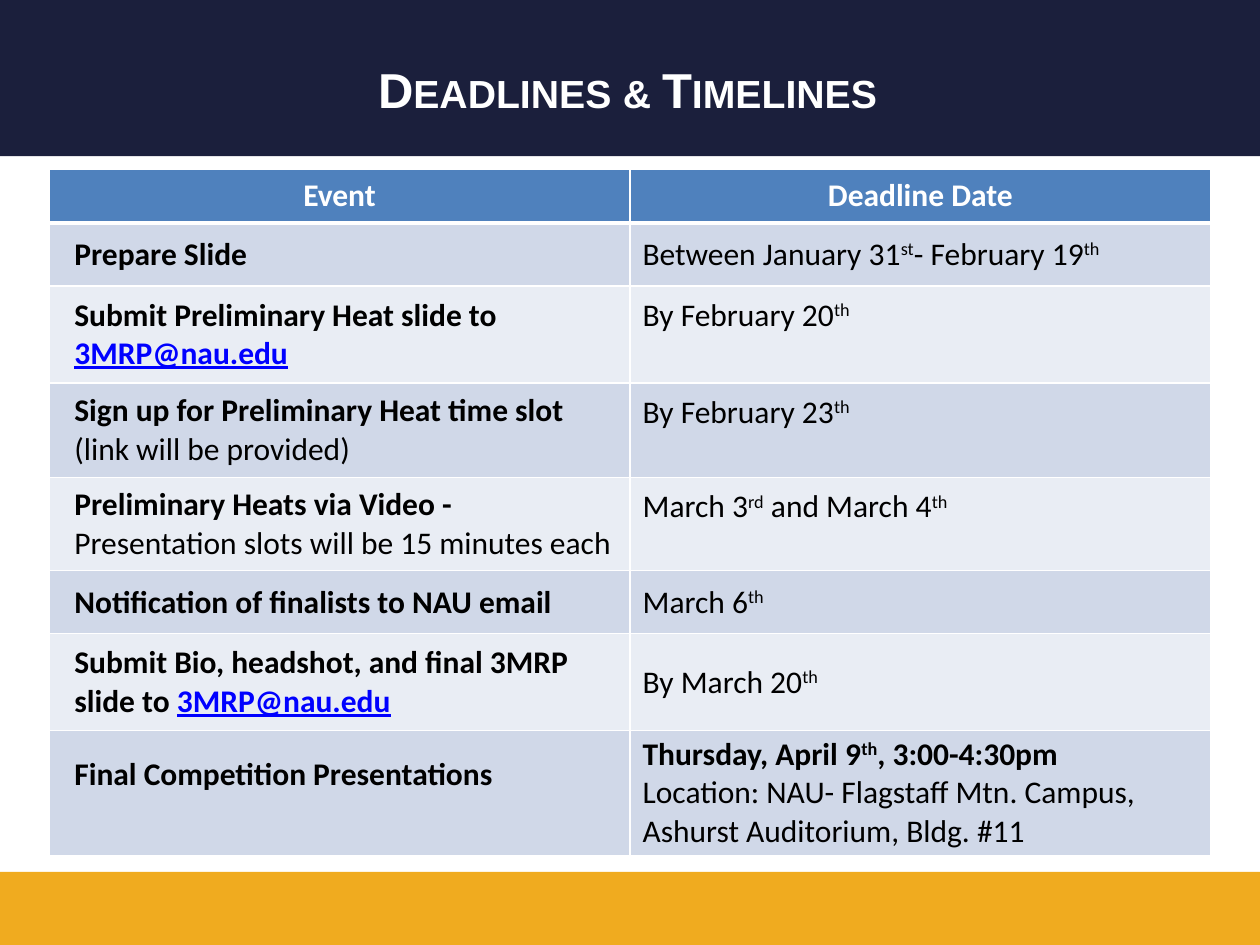
import pptx
import pptx.util
import pptx.dml.color
import pptx.enum.shapes
import pptx.enum.text
import lxml.etree

Inches, Pt = pptx.util.Inches, pptx.util.Pt
RGB = pptx.dml.color.RGBColor
Align = pptx.enum.text.PP_ALIGN
Anchor = pptx.enum.text.MSO_ANCHOR

NAVY = RGB(0x1B, 0x1F, 0x3C)
GOLD = RGB(0xF0, 0xAB, 0x1F)
WHITE = RGB(0xFF, 0xFF, 0xFF)
BLACK = RGB(0, 0, 0)
LINK = RGB(0, 0, 0xFF)
HEAD = RGB(0x4F, 0x81, 0xBD)
DARK = RGB(0xD0, 0xD8, 0xE8)
LIGHT = RGB(0xE9, 0xED, 0xF4)

# Content: a cell is a list of lines, a line a list of (text, style) runs
# Styles: b bold, u link, s superscript
TITLE = "Deadlines & Timelines"
MAIL = ("3MRP@nau.edu", "bu")
TH = ("th", "s")
HEADS = ["Event", "Deadline Date"]
ROWS = [
    ([[("Prepare Slide", "b")]],
     [[("Between January 31", ""), ("st", "s"), ("- February 19", ""), TH]]),
    ([[("Submit Preliminary Heat slide to", "b")], [MAIL]],
     [[("By February 20", ""), TH]]),
    ([[("Sign up for Preliminary Heat time slot", "b")],
      [("(link will be provided)", "")]],
     [[("By February 23", ""), TH]]),
    ([[("Preliminary Heats via Video -", "b")],
      [("Presentation slots will be 15 minutes each", "")]],
     [[("March 3", ""), ("rd", "s"), (" and March 4", ""), TH]]),
    ([[("Notification of finalists to NAU email", "b")]],
     [[("March 6", ""), TH]]),
    ([[("Submit Bio, headshot, and final 3MRP slide to ", "b"), MAIL]],
     [[("By March 20", ""), TH]]),
    ([[("Final Competition Presentations", "b")]],
     [[("Thursday, April 9", "b"), ("th", "bs"), (", 3:00-4:30pm", "b")],
      [("Location: NAU- Flagstaff Mtn. Campus,", "")],
      [("Ashurst Auditorium, Bldg. #11", "")]]),
]
HIGHS = [0.43, 0.5, 0.77, 0.75, 0.74, 0.5, 0.77, 0.99]
# Cells set from the top: (row, column) -> top margin
TOPS = {(2, 1): 0.08, (3, 1): 0.08, (4, 1): 0.08, (7, 0): 0.2}


def add_band(slide, top, high, color):
    band = slide.shapes.add_shape(
        pptx.enum.shapes.MSO_SHAPE.RECTANGLE,
        0, Inches(top), Inches(10), Inches(high))
    band.shadow.inherit = False
    band.fill.solid()
    band.fill.fore_color.rgb = color
    band.line.fill.background()


def set_font(run, size, name, color, bold):
    font = run.font
    font.size, font.name, font.bold = Pt(size), name, bold
    font.color.rgb = color


def add_runs(para, line, color):
    for text, style in line:
        run = para.add_run()
        run.text = text
        set_font(run, 18, "Calibri", LINK if "u" in style else color,
                 "b" in style)
        if "u" in style:
            run.font.underline = True
        if "s" in style:
            run.font._element.set("baseline", "30000")


def set_edges(cell, row):
    wide = {"L": 1, "R": 1, "T": 3 if row == 1 else 1,
            "B": 3 if row == 0 else 1}
    props = cell._tc.get_or_add_tcPr()
    ns = "http://schemas.openxmlformats.org/drawingml/2006/main"
    for spot, (side, width) in enumerate(wide.items()):
        edge = lxml.etree.Element(f"{{{ns}}}ln{side}", w=str(Pt(width)))
        fill = lxml.etree.SubElement(edge, f"{{{ns}}}solidFill")
        lxml.etree.SubElement(fill, f"{{{ns}}}srgbClr", val=str(WHITE))
        props.insert(spot, edge)


def fill_cell(cell, row, col, lines):
    head = row == 0
    cell.fill.solid()
    cell.fill.fore_color.rgb = HEAD if head else DARK if row % 2 else LIGHT
    set_edges(cell, row)
    cell.margin_left = Inches(0.2 if col == 0 and not head else 0.1)
    cell.margin_top = Inches(TOPS.get((row, col), 0.03))
    cell.margin_bottom = Inches(0.03)
    cell.vertical_anchor = (
        Anchor.TOP if (row, col) in TOPS else Anchor.MIDDLE)
    frame = cell.text_frame
    for spot, line in enumerate(lines):
        para = frame.add_paragraph() if spot else frame.paragraphs[0]
        para.alignment = Align.CENTER if head else Align.LEFT
        add_runs(para, line, WHITE if head else BLACK)


def main():
    deck = pptx.Presentation()
    deck.slide_width, deck.slide_height = Inches(10), Inches(7.5)
    slide = deck.slides.add_slide(deck.slide_layouts[5])

    # Bands
    add_band(slide, 6.92, 0.58, GOLD)
    add_band(slide, 0, 1.24, NAVY)

    # Title, raised above the bands
    title = slide.shapes.title
    slide.shapes._spTree.append(title._element)
    title.left, title.top = Inches(1.45), Inches(0.32)
    title.width, title.height = Inches(7.56), Inches(0.71)
    frame = title.text_frame
    frame.text = TITLE
    frame.auto_size = pptx.enum.text.MSO_AUTO_SIZE.NONE
    frame.vertical_anchor = Anchor.TOP
    frame.margin_left, frame.margin_top = Inches(1.55), Inches(0.15)
    frame.margin_right = frame.margin_bottom = 0
    para = frame.paragraphs[0]
    para.alignment = Align.LEFT
    set_font(para.runs[0], 28, "Arial", WHITE, True)
    para.runs[0].font._element.set("cap", "small")

    # Table
    cells = [[[[(text, "b")]] for text in HEADS]] + ROWS
    table = slide.shapes.add_table(
        len(cells), 2, Inches(0.39), Inches(1.34),
        Inches(9.22), Inches(sum(HIGHS))).table
    for row, pair in enumerate(cells):
        table.rows[row].height = Inches(HIGHS[row])
        for col, lines in enumerate(pair):
            fill_cell(table.cell(row, col), row, col, lines)

    deck.save("out.pptx")


if __name__ == "__main__":
    main()
